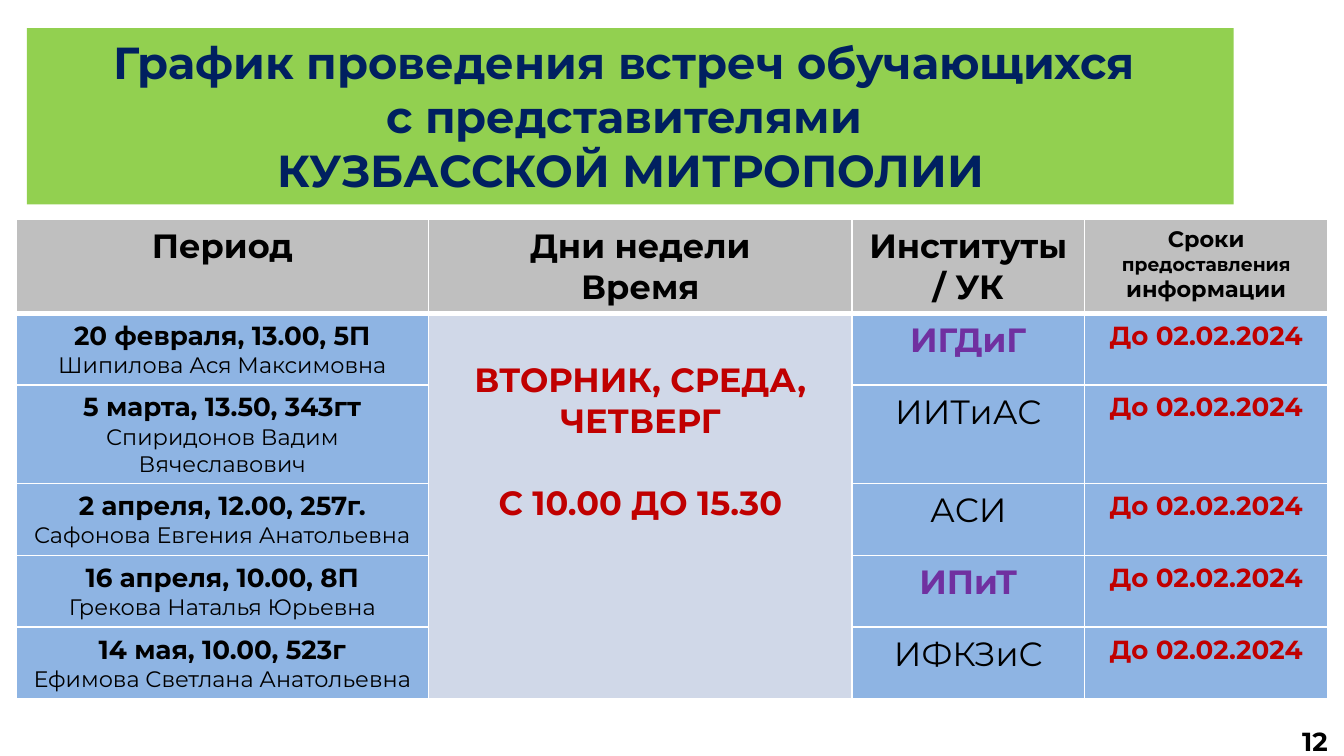
from lxml import etree
from pptx import Presentation, util as u
from pptx.dml.color import RGBColor
from pptx.enum import text
from pptx.oxml import ns

WIDTH = 10
HEIGHT = WIDTH * 9 / 16
COLUMNS = [3.07, 3.15, 1.73, 1.81]
ROWS = [0.69, 0.53, 0.73, 0.53, 0.53, 0.53]
BLACK, WHITE, NAVY, RED, PURPLE = "000000", "FFFFFF", "002060", "C00000", "7030A0"
GREEN, GREY, BLUE, PALE = "92D050", "BFBFBF", "8EB4E3", "D0D8E8"
DEADLINE = "До 02.02.2024"
HEADINGS = [
    [[("Период", 18)]],
    [[("Дни недели", 18)], [("Время", 18)]],
    [[("Институты / УК", 18)]],
    [[("Сроки ", 12), ("предоставления ", 10), ("информации", 12)]],
]
MEETINGS = [
    ("20 февраля, 13.00, 5П", "Шипилова Ася Максимовна", "ИГДиГ", True),
    ("5 марта, 13.50, 343гт", "Спиридонов Вадим Вячеславович", "ИИТиАС", False),
    ("2 апреля, 12.00, 257г.", "Сафонова Евгения Анатольевна", "АСИ", False),
    ("16 апреля, 10.00, 8П", "Грекова Наталья Юрьевна", "ИПиТ", True),
    ("14 мая, 10.00, 523г", "Ефимова Светлана Анатольевна", "ИФКЗиС", False),
]


def colour(value):
    return RGBColor.from_string(value)


def paint(part, value):
    part.fill.solid()
    part.fill.fore_color.rgb = colour(value)


def write(frame, paragraphs, gap=0):
    frame.word_wrap = True
    for index, pieces in enumerate(paragraphs):
        line = frame.add_paragraph() if index else frame.paragraphs[0]
        line.alignment = text.PP_ALIGN.CENTER
        if index and gap:
            line.space_before = u.Pt(gap)
        for words, size, *style in pieces:
            tint, bold = style or (BLACK, True)
            run = line.add_run()
            run.text = words
            font_format = {"name": "Montserrat", "size": u.Pt(size), "bold": bold}
            for key, value in font_format.items():
                setattr(run.font, key, value)
            run.font.color.rgb = colour(tint)


def place(part, left, top, width, height):
    box = {"left": left, "top": top, "width": width, "height": height}
    for key, value in box.items():
        setattr(part, key, u.Inches(value))


def add_heading(slide):
    heading = slide.shapes.title
    place(heading, 0.02 * WIDTH, 0.21, 8.98, 1.31)
    paint(heading, GREEN)
    lines = ["График проведения встреч обучающихся ", "с представителями ",
             "КУЗБАССКОЙ МИТРОПОЛИИ"]
    write(heading.text_frame, [[(line, 24, NAVY, True)] for line in lines])
    heading.text_frame.auto_size = text.MSO_AUTO_SIZE.SHAPE_TO_FIT_TEXT
    heading.text_frame.vertical_anchor = text.MSO_ANCHOR.TOP


def set_borders(cell, top, bottom):
    properties = cell._tc.get_or_add_tcPr()
    widths = {"lnL": 1, "lnR": 1, "lnT": top, "lnB": bottom}
    for index, (side, width) in enumerate(widths.items()):
        border = etree.Element(ns.qn("a:" + side), w=str(u.Pt(width)))
        tint = etree.SubElement(border, ns.qn("a:solidFill"))
        etree.SubElement(tint, ns.qn("a:srgbClr"), val=WHITE)
        properties.insert(index, border)


def fill_cell(cell, background, paragraphs, gap=0):
    paint(cell, background)
    write(cell.text_frame, paragraphs, gap)


def add_schedule(slide):
    schedule = slide.shapes.add_table(
        len(ROWS), len(COLUMNS), u.Inches(0.12), u.Inches(1.63),
        u.Inches(sum(COLUMNS)), u.Inches(sum(ROWS))).table
    schedule.horz_banding = False
    for column, width in zip(schedule.columns, COLUMNS):
        column.width = u.Inches(width)
    for row, height in zip(schedule.rows, ROWS):
        row.height = u.Inches(height)
    for column, heading in enumerate(HEADINGS):
        fill_cell(schedule.cell(0, column), GREY, heading)
        set_borders(schedule.cell(0, column), 1, 3)
        set_borders(schedule.cell(1, column), 3, 1)
    for row, (period, person, institute, marked) in enumerate(MEETINGS, 1):
        fill_cell(schedule.cell(row, 0), BLUE,
                  [[(period, 14)], [(person, 12, BLACK, False)]])
        fill_cell(schedule.cell(row, 2), BLUE,
                  [[(institute, 18, PURPLE if marked else BLACK, marked)]])
        fill_cell(schedule.cell(row, 3), BLUE, [[(DEADLINE, 14, RED, True)]])
    hours = schedule.cell(1, 1)
    hours.merge(schedule.cell(len(MEETINGS), 1))
    hours.margin_top = u.Inches(0.35)
    fill_cell(hours, PALE, [[("ВТОРНИК, СРЕДА, ЧЕТВЕРГ", 18, RED, True)],
                            [("С 10.00 ДО 15.30", 18, RED, True)]], gap=22)


def add_page_number(slide):
    number = slide.shapes.add_textbox(0, 0, 0, 0)
    place(number, WIDTH - 0.43, 5.35, 0.43, 0.29)
    write(number.text_frame, [[("12", 14)]])


def main():
    deck = Presentation()
    deck.slide_width, deck.slide_height = u.Inches(WIDTH), u.Inches(HEIGHT)
    slide = deck.slides.add_slide(deck.slide_layouts[5])
    add_heading(slide)
    add_page_number(slide)
    add_schedule(slide)
    deck.save("out.pptx")


if __name__ == "__main__":
    main()
